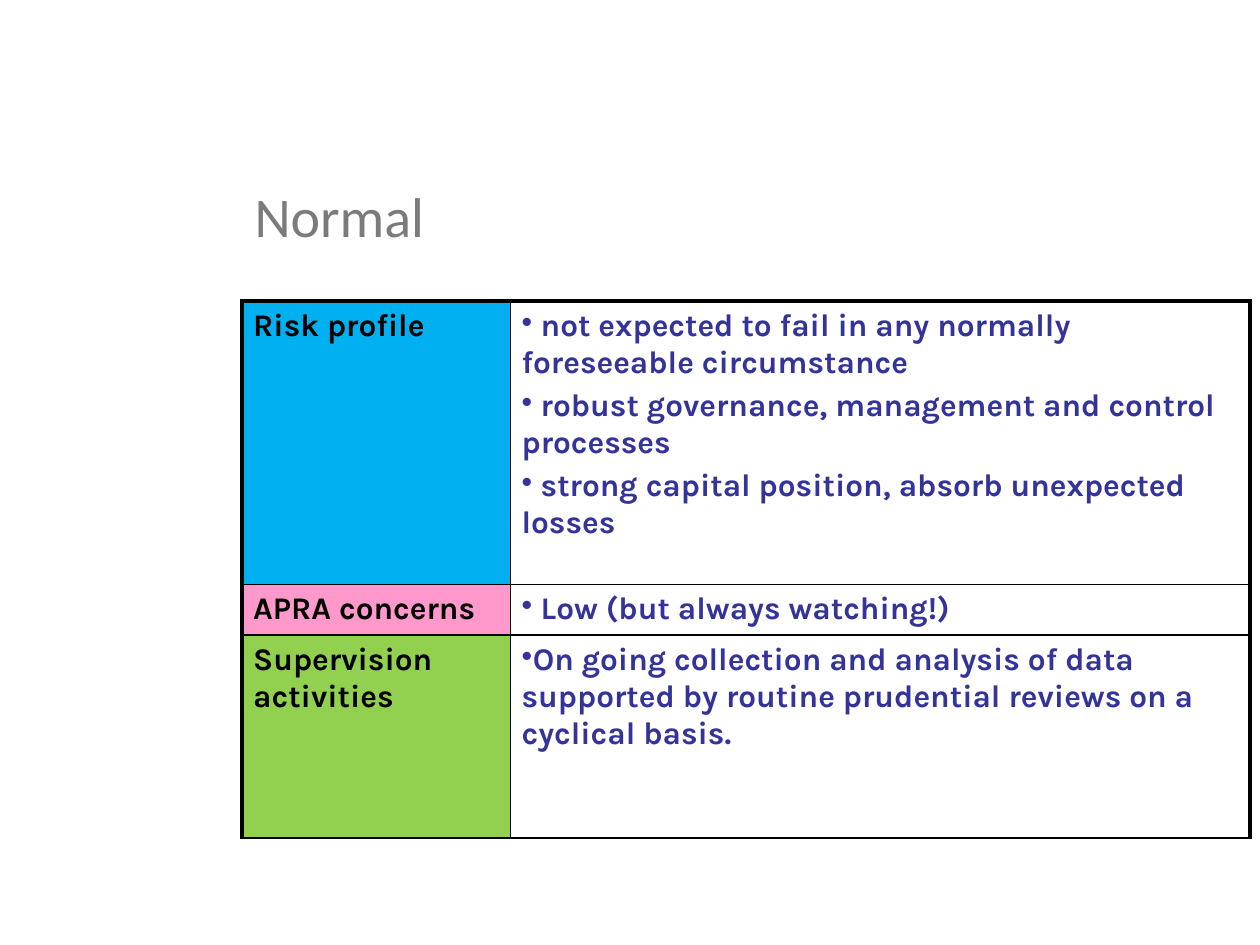
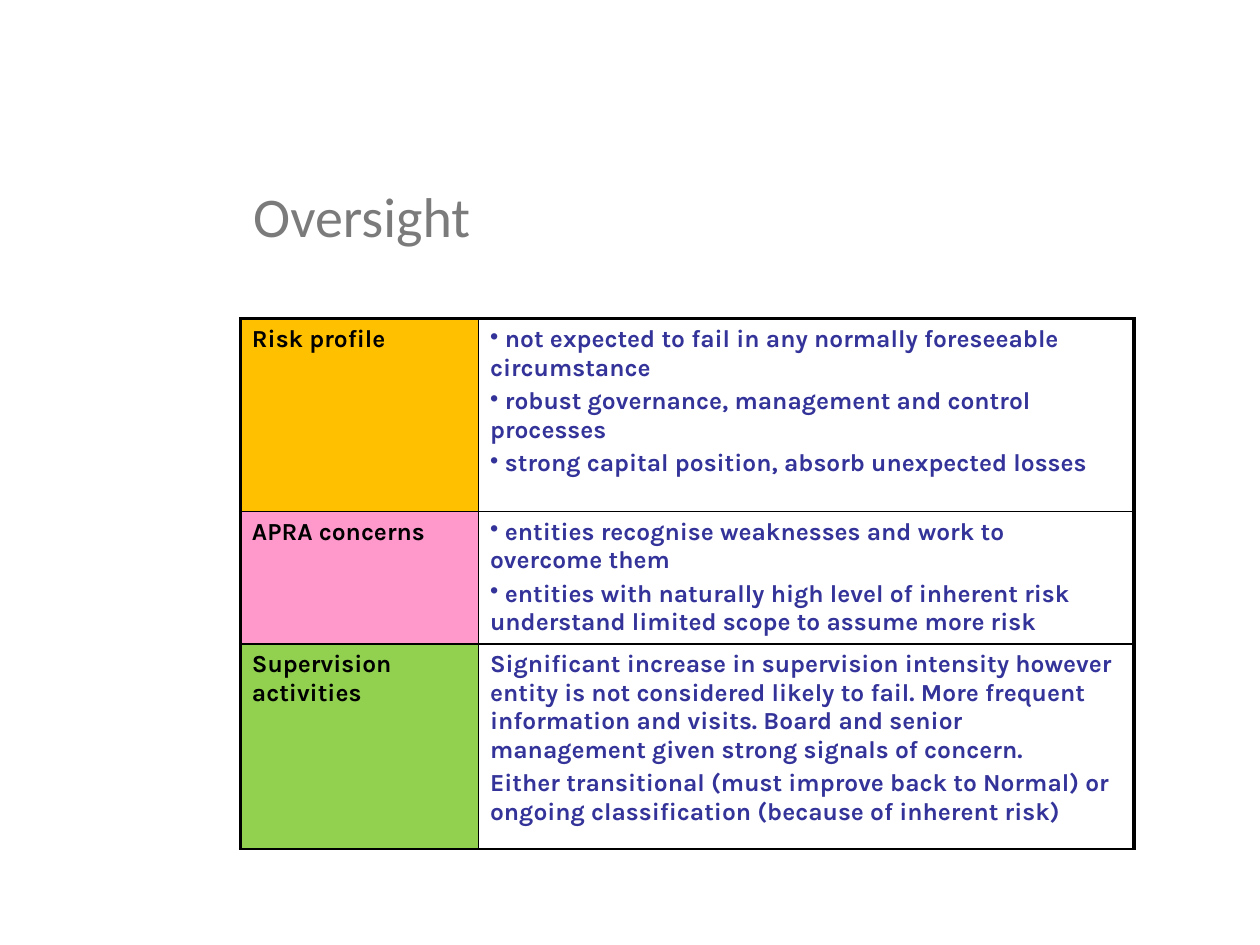
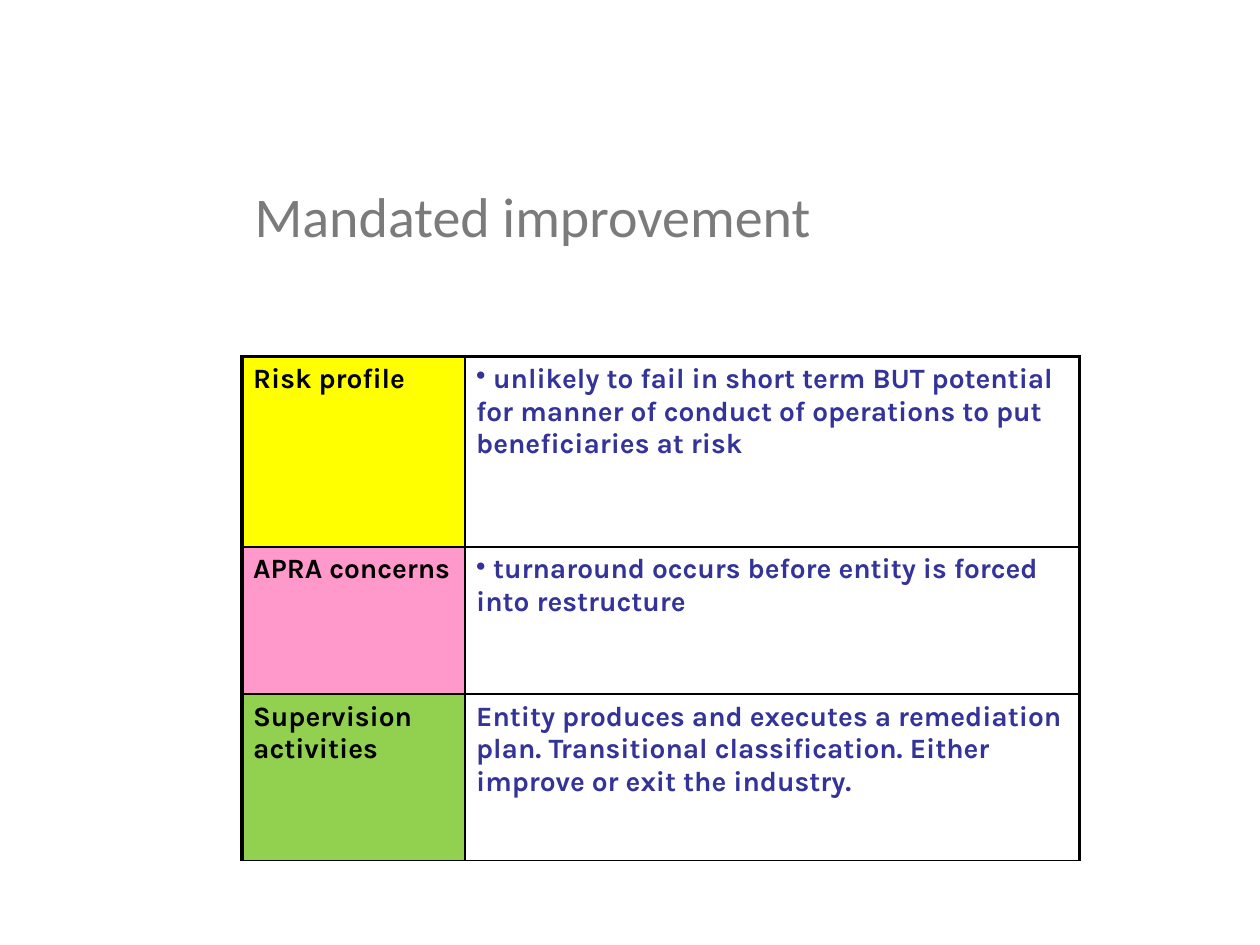
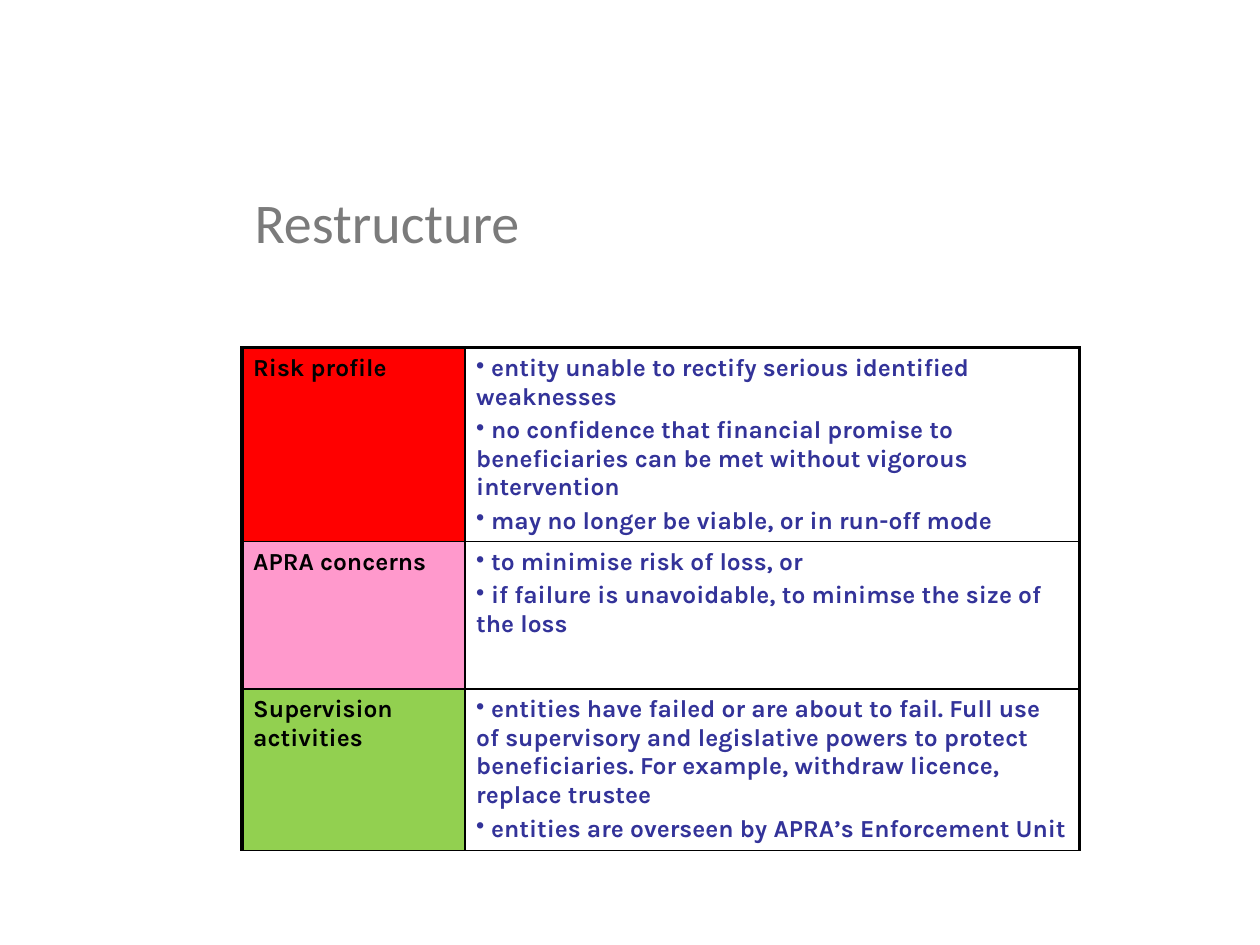
from dataclasses import dataclass

from lxml import etree
from pptx import Presentation
from pptx.dml.color import RGBColor
from pptx.enum.text import MSO_ANCHOR, PP_ALIGN
from pptx.oxml.ns import qn
from pptx.util import Inches, Pt

LEFT = PP_ALIGN.LEFT
MIDDLE = MSO_ANCHOR.MIDDLE


@dataclass(frozen=True)
class Theme:
    """Colours, fonts, type sizes and line widths of the deck."""
    head_font: str = "Calibri"
    body_font: str = "Karla"
    head_size: int = 32
    grey: str = "7B7B7B"
    black: str = "000000"
    navy: str = "333399"
    pink: str = "FF99CC"
    green: str = "92D050"
    thick: float = 2.25
    thin: float = 1
    gap: float = 0.2


THEME = Theme()
LABELS = ("Risk profile", "APRA concerns", "Supervision activities")

STAGES = [
    dict(
        title="Normal", hue="00B0F0", size=18, left=1.92, top=1.35, start=2.39,
        cols=(2.13, 5.87), rows=(2.25, 0.4, 1.61),
        notes=(
            ["• not expected to fail in any normally foreseeable circumstance",
             "• robust governance, management and control processes",
             "• strong capital position, absorb unexpected losses"],
            ["• Low (but always watching!)"],
            ["•On going collection and analysis of data supported by routine "
             "prudential reviews on a cyclical basis."],
        ),
    ),
    dict(
        title="Oversight", hue="FFC000", size=14, left=1.91, top=1.35, start=2.53,
        cols=(1.89, 5.2), rows=(1.53, 1.05, 1.63),
        notes=(
            ["• not expected to fail in any normally foreseeable circumstance",
             "• robust governance, management and control processes",
             "• strong capital position, absorb unexpected losses"],
            ["• entities recognise weaknesses and work to overcome them",
             "• entities with naturally high level of inherent risk understand "
             "limited scope to assume more risk"],
            ["Significant increase in supervision intensity however entity is "
             "not considered likely to fail. More frequent information and "
             "visits. Board and senior management given strong signals of "
             "concern.",
             "Either transitional (must improve back to Normal) or ongoing "
             "classification (because of inherent risk)"],
        ),
    ),
    dict(
        title="Mandated improvement", hue="FFFF00", size=16, left=1.92, top=1.35,
        start=2.83, cols=(1.77, 4.88), rows=(1.51, 1.17, 1.32),
        notes=(
            ["• unlikely to fail in short term BUT potential for manner of "
             "conduct of operations to put beneficiaries at risk"],
            ["• turnaround occurs before entity is forced into restructure"],
            ["Entity produces and executes a remediation plan. Transitional "
             "classification. Either improve or exit the industry."],
        ),
    ),
    dict(
        title="Restructure", hue="FF0000", size=14, left=1.92, top=1.4, start=2.76,
        cols=(1.77, 4.88), rows=(1.53, 1.17, 1.28),
        notes=(
            ["• entity unable to rectify serious identified weaknesses",
             "• no confidence that financial promise to beneficiaries can be "
             "met without vigorous intervention",
             "• may no longer be viable, or in run-off mode"],
            ["• to minimise risk of loss, or",
             "• if failure is unavoidable, to minimse the size of the loss"],
            ["• entities have failed or are about to fail. Full use of "
             "supervisory and legislative powers to protect beneficiaries. "
             "For example, withdraw licence, replace trustee",
             "• entities are overseen by APRA’s Enforcement Unit"],
        ),
    ),
]


def write(frame, lines, *, size, color, font=THEME.body_font, bold=False):
    """Fill a text frame; a line that starts with a bullet sign gets a bullet."""
    for i, line in enumerate(lines):
        para = frame.paragraphs[0] if i == 0 else frame.add_paragraph()
        if line.startswith("•"):
            props = para._p.get_or_add_pPr()
            props.set("marL", "0")
            props.set("indent", "0")
            etree.SubElement(props, qn("a:buChar"), char="•")
        para.alignment = LEFT
        if i:
            para.space_before = Pt(THEME.gap * size)
        run = para.add_run()
        run.text = line.removeprefix("•")
        run.font.name = font
        run.font.size = Pt(size)
        run.font.bold = bold
        run.font.color.rgb = RGBColor.from_string(color)


def edge(cell, side, width):
    """Draw one black border of a cell."""
    props = cell._tc.get_or_add_tcPr()
    line = etree.SubElement(props, qn(f"a:ln{side}"), w=str(Pt(width)))
    fill = etree.SubElement(line, qn("a:solidFill"))
    etree.SubElement(fill, qn("a:srgbClr"), val=THEME.black)


def frame_cell(cell, row, col):
    """Give a cell thin borders, thick on the top and sides of the table."""
    heavy = {"L": col == 0, "R": col == 1, "T": row == 0, "B": False}
    for side, thick in heavy.items():
        edge(cell, side, THEME.thick if thick else THEME.thin)


def add_title(slide, text, left, top):
    """Place and format the title."""
    shape = slide.shapes.title
    shape.left, shape.top = Inches(left), Inches(top)
    shape.width, shape.height = Inches(9), Inches(0.71)
    shape.text_frame.vertical_anchor = MIDDLE
    write(shape.text_frame, [text], size=THEME.head_size, color=THEME.grey,
          font=THEME.head_font)


def add_grid(slide, left, top, cols, rows, hue, notes, size):
    """Add the table of labels and notes."""
    table = slide.shapes.add_table(
        len(rows), len(cols), Inches(left), Inches(top),
        Inches(sum(cols)), Inches(sum(rows))).table
    table.first_row = table.horz_banding = False
    for column, width in zip(table.columns, cols):
        column.width = Inches(width)
    fills = (hue, THEME.pink, THEME.green)
    for i, height in enumerate(rows):
        table.rows[i].height = Inches(height)
        label, note = table.cell(i, 0), table.cell(i, 1)
        for col, cell in enumerate((label, note)):
            frame_cell(cell, i, col)
            cell.margin_left = cell.margin_right = Inches(0.09)
            cell.margin_top = cell.margin_bottom = Inches(0.05)
        label.fill.solid()
        label.fill.fore_color.rgb = RGBColor.from_string(fills[i])
        note.fill.background()
        write(label.text_frame, [LABELS[i]], size=size, color=THEME.black, bold=True)
        write(note.text_frame, notes[i], size=size, color=THEME.navy, bold=True)


def add_stage(deck, title, hue, size, left, top, start, cols, rows, notes):
    """Add the slide of one supervision stage."""
    slide = deck.slides.add_slide(deck.slide_layouts[5])
    add_title(slide, title, left, top)
    add_grid(slide, left, start, cols, rows, hue, notes, size)


def main():
    """Build and save the deck."""
    deck = Presentation()
    deck.slide_width, deck.slide_height = Inches(10), Inches(7.5)
    for stage in STAGES:
        add_stage(deck, **stage)
    deck.save("out.pptx")


if __name__ == "__main__":
    main()
